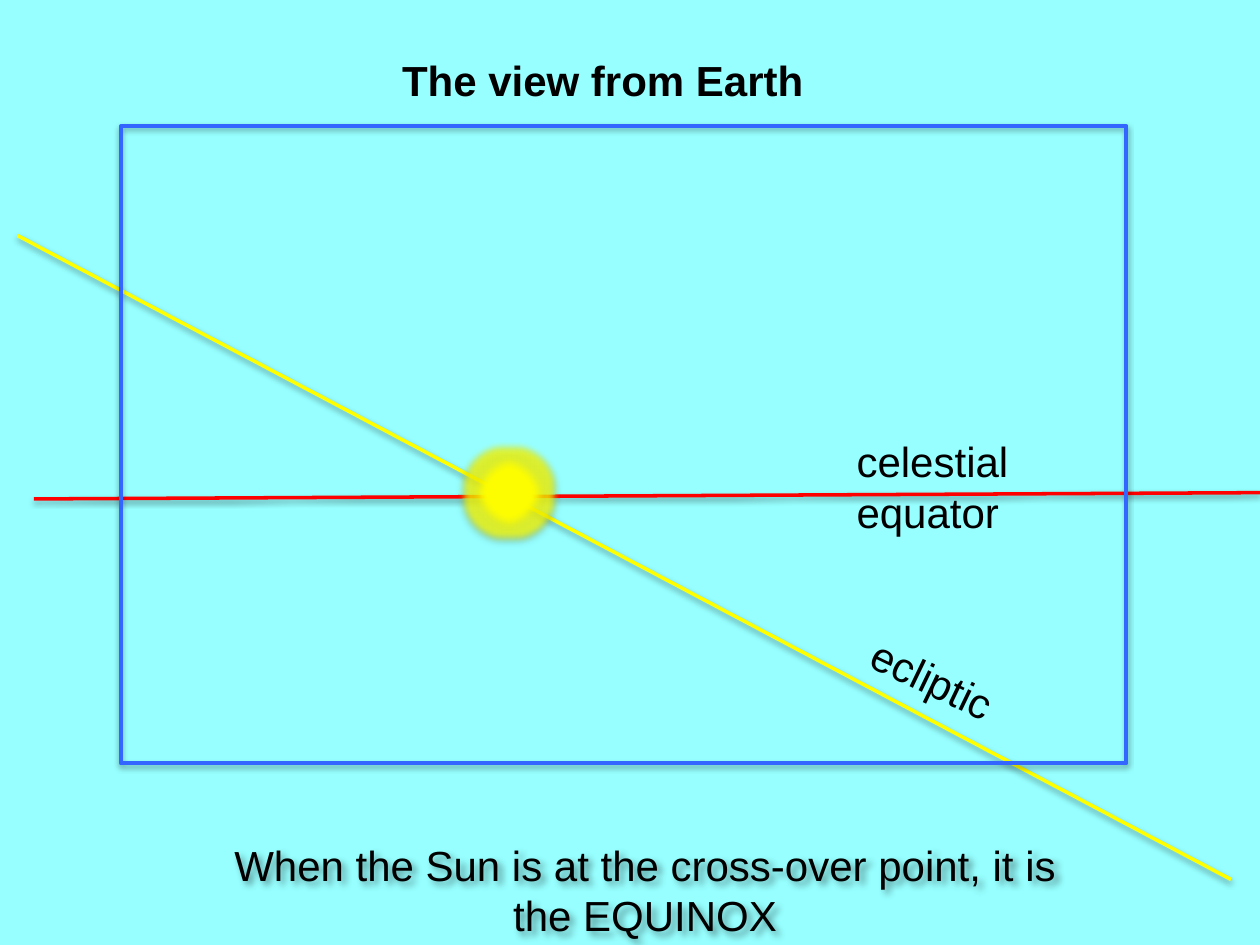
from lxml import etree
from pptx import Presentation
from pptx.dml.color import RGBColor
from pptx.enum.shapes import MSO_CONNECTOR, MSO_SHAPE
from pptx.enum.text import PP_ALIGN
from pptx.oxml.ns import qn
from pptx.util import Inches, Pt

SKY = RGBColor(0x97, 0xFF, 0xFF)
YELLOW = RGBColor(0xFF, 0xFF, 0x00)
RED = RGBColor(0xFF, 0x00, 0x00)
BLUE = RGBColor(0x33, 0x66, 0xFF)
BLACK = RGBColor(0x00, 0x00, 0x00)


def add_effect(parent, tag, color, alpha, **attrs):
    effect = etree.SubElement(parent, qn(tag), {k: str(v) for k, v in attrs.items()})
    clr = etree.SubElement(effect, qn("a:srgbClr"), val=str(color))
    etree.SubElement(clr, qn("a:alpha"), val=str(alpha * 1000))


def add_shadow(effects, alpha=35, blur=3.1, dist=1.8, angle=90):
    add_effect(effects, "a:outerShdw", BLACK, alpha, blurRad=Pt(blur),
               dist=Pt(dist), dir=angle * 60000, algn="ctr", rotWithShape=0)


def write_text(tf, text, size=24, bold=False, align=PP_ALIGN.LEFT):
    tf.word_wrap = True
    p = tf.paragraphs[0]
    p.alignment = align
    r = p.add_run()
    r.text = text
    r.font.name = "Arial"
    r.font.size = Pt(size)
    r.font.bold = bold
    r.font.color.rgb = BLACK


class Painter:
    def __init__(self, slide):
        self.s = slide
        bg = slide.background.fill
        bg.solid()
        bg.fore_color.rgb = SKY

    def effects(self, sp):
        return etree.SubElement(sp._element.spPr, qn("a:effectLst"))

    def line(self, start, end, color):
        sp = self.s.shapes.add_connector(
            MSO_CONNECTOR.STRAIGHT, *map(Inches, (*start, *end)))
        sp.line.color.rgb = color
        sp.line.width = Pt(2)
        add_shadow(self.effects(sp), alpha=38, dist=1.6)

    def shape(self, kind, box, color, width, filled=False):
        sp = self.s.shapes.add_shape(kind, *map(Inches, box))
        if filled:
            sp.fill.solid()
            sp.fill.fore_color.rgb = color
        else:
            sp.fill.background()
        sp.line.color.rgb = color
        sp.line.width = Pt(width)
        return self.effects(sp)

    def frame(self, box):
        add_shadow(self.shape(MSO_SHAPE.RECTANGLE, box, BLUE, 2.25))

    def sun(self, box):
        effects = self.shape(MSO_SHAPE.OVAL, box, YELLOW, 0.75, filled=True)
        add_effect(effects, "a:glow", YELLOW, 75, rad=Pt(8))
        add_shadow(effects)
        etree.SubElement(effects, qn("a:softEdge"), rad=str(Pt(5)))

    def label(self, text, box, rotation=0, shadow=False, **style):
        sp = self.s.shapes.add_textbox(*map(Inches, box))
        sp.rotation = rotation
        write_text(sp.text_frame, text, **style)
        if shadow:
            sp.fill.background()
            add_shadow(self.effects(sp), alpha=43, blur=4, dist=3, angle=45)


def main():
    prs = Presentation()
    prs.slide_width = Inches(10)
    prs.slide_height = Inches(7.5)
    s = Painter(prs.slides.add_slide(prs.slide_layouts[6]))

    s.line((0.14, 1.87), (9.77, 6.98), YELLOW)
    s.line((0.27, 3.96), (10, 3.91), RED)
    s.label("celestial equator", (6.7, 3.41, 1.9, 0.91))
    s.label("ecliptic", (6.79, 5.16, 1.31, 0.5), rotation=25.7)
    s.label("When the Sun is at the cross-over point, it is the EQUINOX",
            (1.66, 6.61, 6.92, 0.91), shadow=True, align=PP_ALIGN.CENTER)
    s.sun((3.73, 3.6, 0.62, 0.62))
    s.frame((0.96, 1, 7.98, 5.06))
    s.label("The view from Earth ", (2.74, 0.38, 4.18, 0.4),
            bold=True, align=PP_ALIGN.CENTER)
    prs.save("out.pptx")


if __name__ == "__main__":
    main()
